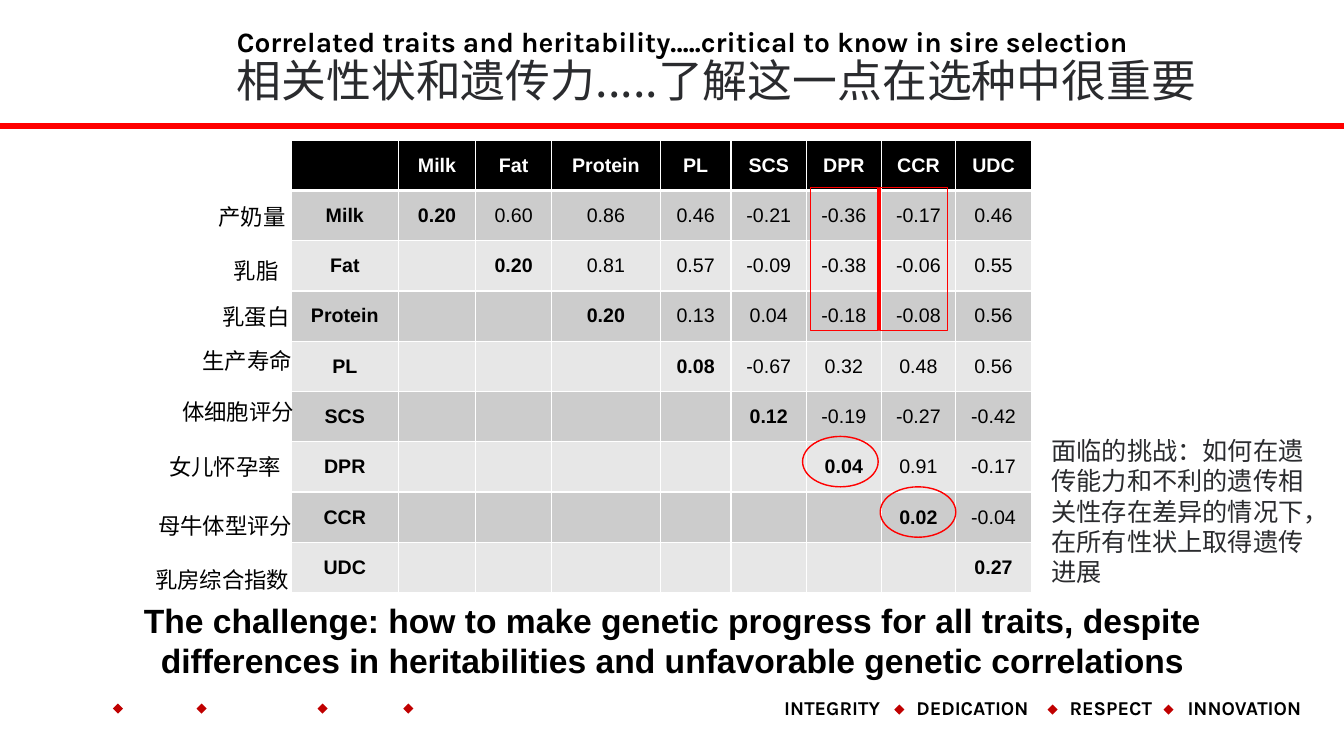
from dataclasses import dataclass

from lxml.etree import SubElement
from pptx import Presentation
from pptx.dml.color import RGBColor
from pptx.enum.shapes import MSO_CONNECTOR as LINK, MSO_SHAPE as SHAPE
from pptx.enum.text import MSO_ANCHOR as ANCHOR, MSO_AUTO_SIZE as FIT, PP_ALIGN as ALIGN
from pptx.oxml.ns import qn
from pptx.util import Inches, Pt

GRID = 0.1
BLACK, WHITE, RED, DARK_RED, INK = "000000", "FFFFFF", "FF0000", "C00000", "2A2B2E"
BANDS = ["E7E7E7", "CCCCCC"]
LATIN, HEADING, CHINESE = "Arial", "Karla", "Noto Sans CJK SC"

TRAITS = ["Milk", "Fat", "Protein", "PL", "SCS", "DPR", "CCR", "UDC"]
COLUMNS = [10.6, 7.7, 7.5, 10.8, 7, 7.5, 7.4, 7.4, 7.5]
CORRELATIONS = [
    ["0.20", "0.60", "0.86", "0.46", "-0.21", "-0.36", "-0.17", "0.46"],
    ["0.20", "0.81", "0.57", "-0.09", "-0.38", "-0.06", "0.55"],
    ["0.20", "0.13", "0.04", "-0.18", "-0.08", "0.56"],
    ["0.08", "-0.67", "0.32", "0.48", "0.56"],
    ["0.12", "-0.19", "-0.27", "-0.42"],
    ["0.04", "0.91", "-0.17"],
    ["0.02", "-0.04"],
    ["0.27"],
]
TRAIT_LABELS = [
    ("产奶量", 6.3, 0, 11.3),
    ("乳脂", 7.8, 5.3, 11.3),
    ("乳蛋白", 6.7, 9.9, 11.3),
    ("生产寿命", 4.7, 14.2, 12.9),
    ("体细胞评分", 2.7, 19.3, 13.4),
    ("女儿怀孕率", 1.4, 24.8, 16.1),
    ("母牛体型评分", 0.3, 30.6, 16.2),
    ("乳房综合指数", 0, 36, 17.2),
]
VALUES = [
    ("INTEGRITY", 0, 15.3),
    ("DEDICATION", 13.1, 15.3),
    ("RESPECT", 28.3, 15.3),
    ("INNOVATION", 40, 14.4),
]


@dataclass
class Box:
    left: float
    top: float
    width: float
    height: float

    def inner(self, left, top, width, height):
        return Box(self.left + left, self.top + top, width, height)

    def emu(self):
        return [Inches(n * GRID) for n in (self.left, self.top, self.width, self.height)]


def color(code):
    return RGBColor.from_string(code)


def add_run(paragraph, words, size, font, ink=BLACK, bold=False):
    run = paragraph.add_run()
    run.text = words
    run.font.size, run.font.name, run.font.bold = Pt(size), font, bold
    run.font.color.rgb = color(ink)
    if font == CHINESE:
        SubElement(run.font._element, qn("a:ea")).set("typeface", font)


def add_text(slide, box, anchor=ANCHOR.TOP, fit=FIT.NONE):
    frame = slide.shapes.add_textbox(*box.emu()).text_frame
    frame.word_wrap, frame.auto_size, frame.vertical_anchor = True, fit, anchor
    return frame.paragraphs[0]


def add_mark(slide, kind, box, fill=None, line=None):
    mark = slide.shapes.add_shape(kind, *box.emu())
    mark.shadow.inherit = False
    if fill:
        mark.fill.solid()
        mark.fill.fore_color.rgb = color(fill)
    else:
        mark.fill.background()
    if line:
        mark.line.color.rgb = color(line)
        mark.line.width = Pt(1)
    else:
        mark.line.fill.background()


def footer(slide, box):
    for left in (11.2, 19.5, 31.5, 40):
        add_mark(slide, SHAPE.DIAMOND, box.inner(left, 0.9, 1, 1), DARK_RED)
    for left in (88.7, 103.9, 115.4):
        add_mark(slide, SHAPE.DIAMOND, box.inner(left, 1, 1, 1), DARK_RED)
    for word, left, width in VALUES:
        value = add_text(slide, box.inner(76.8 + left, 0, width, box.height), ANCHOR.BOTTOM)
        value.line_spacing = 0.9
        add_run(value, word, 14, HEADING, bold=True)


def heading(slide, box):
    title = add_text(slide, box.inner(22.5, 4.5, 99.9, 6.6), ANCHOR.BOTTOM)
    title.line_spacing = 0.9
    add_run(title, "Correlated traits and heritability…..critical to know in sire selection",
            20, HEADING, bold=True)
    title.add_line_break()
    add_run(title, "相关性状和遗传力.....了解这一点在选种中很重要", 32, CHINESE, INK)
    left, top, width, height = box.emu()
    rule = slide.shapes.add_connector(LINK.STRAIGHT, left, top + height, left + width, top + height)
    rule.line.color.rgb = color(RED)
    rule.line.width = Pt(4.5)
    SubElement(rule._element.spPr, qn("a:effectLst"))


def style_cell(cell, row, fill):
    properties = cell._tc.get_or_add_tcPr()
    weights = {"L": 1, "R": 1, "T": 3 if row == 1 else 1, "B": 3 if row == 0 else 1}
    for side, weight in weights.items():
        border = SubElement(properties, qn(f"a:ln{side}"), w=str(Pt(weight)))
        SubElement(SubElement(border, qn("a:solidFill")), qn("a:srgbClr"), val=WHITE)
    cell.fill.solid()
    cell.fill.fore_color.rgb = color(fill)
    cell.vertical_anchor = ANCHOR.MIDDLE


def correlation_table(slide, box):
    rows = [[""] + TRAITS]
    for index, (trait, values) in enumerate(zip(TRAITS, CORRELATIONS)):
        rows.append([trait] + [""] * index + values)
    table = slide.shapes.add_table(len(rows), len(COLUMNS), *box.emu()).table
    for column, width in zip(table.columns, COLUMNS):
        column.width = Inches(width * GRID)
    for r, row in enumerate(rows):
        table.rows[r].height = Inches(box.height * GRID / len(rows))
        for c, words in enumerate(row):
            cell = table.cell(r, c)
            style_cell(cell, r, BANDS[r % 2] if r else BLACK)
            if words:
                entry = cell.text_frame.paragraphs[0]
                entry.alignment = ALIGN.CENTER
                add_run(entry, words, 14, LATIN, BLACK if r else WHITE, r == 0 or c in (0, r))


def highlights(slide, box):
    for left in (51.5, 58.4):
        add_mark(slide, SHAPE.RECTANGLE, box.inner(left, 4.7, 6.7, 14.2), line=RED)
    for left, top in ((50.7, 29.4), (58.4, 34.4)):
        add_mark(slide, SHAPE.OVAL, box.inner(left, top, 7.5, 5), line=RED)


def trait_labels(slide, box):
    for trait, left, top, width in TRAIT_LABELS:
        label = add_text(slide, box.inner(left, top, width, 3.7), fit=FIT.SHAPE_TO_FIT_TEXT)
        add_run(label, trait, 16, LATIN)


def challenge(slide, box):
    message = add_text(slide, box.inner(0, 16.3, 111.4, 9.1), fit=FIT.SHAPE_TO_FIT_TEXT)
    message.alignment = ALIGN.CENTER
    add_run(message, "The challenge: how to make genetic progress for all traits, despite "
            "differences in heritabilities and unfavorable genetic correlations", 24, LATIN, bold=True)
    translation = add_text(slide, box.inner(92.3, 0, 28.4, 16.2), fit=FIT.SHAPE_TO_FIT_TEXT)
    add_run(translation, "面临的挑战：如何在遗传能力和不利的遗传相关性存在差异的情况下，"
            "在所有性状上取得遗传进展", 18, CHINESE, INK)


def main():
    deck = Presentation()
    deck.slide_width, deck.slide_height = Inches(13.33), Inches(7.5)
    slide = deck.slides.add_slide(deck.slide_layouts[6])
    table_box = Box(28.9, 13.9, sum(COLUMNS), 44.9)
    footer(slide, Box(0, 68.9, 133.3, 3))
    heading(slide, Box(0, 0, 133.3, 12.5))
    correlation_table(slide, table_box)
    highlights(slide, table_box)
    trait_labels(slide, Box(14.4, 19.7, 17.2, 39.7))
    challenge(slide, Box(11, 42.7, 120.7, 25.4))
    deck.save("out.pptx")


if __name__ == "__main__":
    main()
